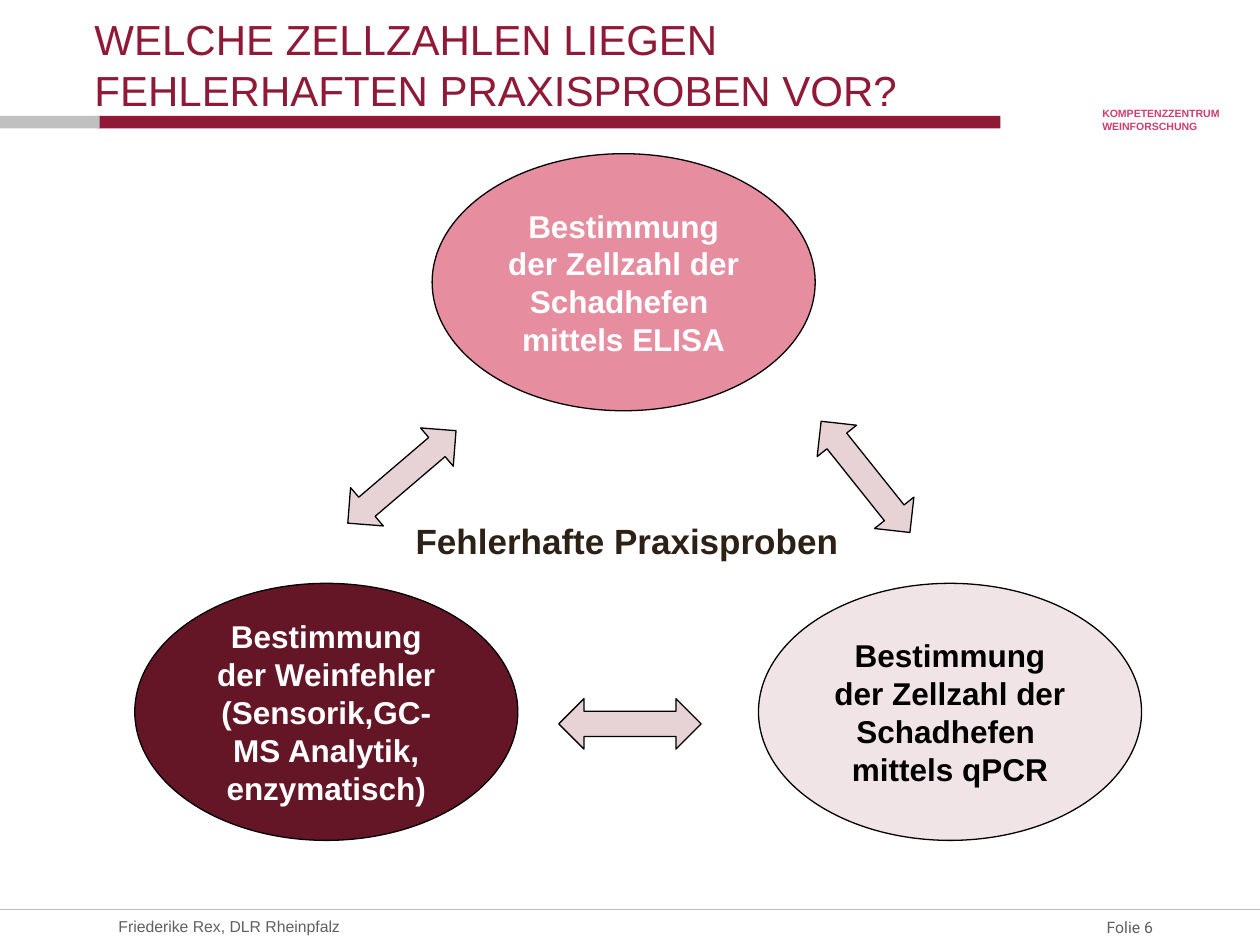
from pptx import Presentation
from pptx.dml.color import RGBColor
from pptx.enum.shapes import MSO_CONNECTOR, MSO_SHAPE
from pptx.enum.text import MSO_ANCHOR, PP_ALIGN
from pptx.util import Inches, Pt
from lxml import etree

W, H = 10, 7.5
WINE, GREY, ARROW = "8F1936", "C0C0C0", "E7D2D6"
BARS = [(0.78, 7.16, WINE), (0, 0.79, GREY)]
OVAL_W, OVAL_H = 3.04, 2.04
OVALS = [
    (1.07, 4.63, "651626", "FFFFFF",
     "Bestimmung der Weinfehler (Sensorik,GC-MS Analytik, enzymatisch)"),
    (3.43, 1.22, "E78DA0", "FFFFFF",
     "Bestimmung der Zellzahl der Schadhefen \vmittels ELISA"),
    (6.02, 4.63, "F1E4E7", "000000",
     "Bestimmung der Zellzahl der Schadhefen \vmittels qPCR"),
]
ARROW_W, ARROW_H = 0.4, 1.13
ARROWS = [(6.67, 3.22, 321.4), (4.8, 5.18, 270), (2.99, 3.22, 229.5)]
FOOTER_Y = 7.22
TEXTS = [
    ("Friederike Rex, DLR Rheinpfalz", (0.94, FOOTER_Y, 6.56, 0.26),
     dict(size=9, color="606060", inset=0, anchor=MSO_ANCHOR.MIDDLE)),
    ("Folie 6", (7.94, FOOTER_Y, 1.21, 0.28),
     dict(size=9, color="606060", font="Roboto", inset=0,
          anchor=MSO_ANCHOR.MIDDLE, align=PP_ALIGN.RIGHT)),
    ("KOMPETENZZENTRUM WEINFORSCHUNG", (8.65, 0.8, 1.33, 0.3),
     dict(size=6, color="CF3D71", bold=True)),
    ("WELCHE ZELLZAHLEN LIEGEN FEHLERHAFTEN PRAXISPROBEN VOR?",
     (0.75, 0.18, 7.44, 0.73),
     dict(size=24, color=WINE, inset=0, anchor=MSO_ANCHOR.BOTTOM)),
    ("Fehlerhafte Praxisproben", (3.2, 4.07, 3.58, 0.44),
     dict(size=20, color="2D2015", bold=True, wrap=False)),
]


def rgb(value):
    """Turn a hex string into a colour."""
    return RGBColor.from_string(value)


def write(sp, text, size, color, font="Arial", bold=False, inset=None,
          anchor=MSO_ANCHOR.TOP, align=PP_ALIGN.LEFT, wrap=True):
    """Fill a shape with one formatted paragraph."""
    tf = sp.text_frame
    tf.word_wrap = wrap
    tf.vertical_anchor = anchor
    if inset is not None:
        tf.margin_left = tf.margin_right = Inches(inset)
        tf.margin_top = tf.margin_bottom = Inches(inset)
    p = tf.paragraphs[0]
    p.text = text
    p.alignment = align
    for r in p.runs:
        r.font.name, r.font.size, r.font.bold = font, Pt(size), bold
        r.font.color.rgb = rgb(color)


def add_shape(s, kind, box, fill, line=None):
    """Add a flat preset shape with an optional thin outline."""
    sp = s.shapes.add_shape(kind, *map(Inches, box))
    sp.shadow.inherit = False
    sp.fill.solid()
    sp.fill.fore_color.rgb = rgb(fill)
    if line:
        sp.line.color.rgb = rgb(line)
        sp.line.width = Pt(0.75)
    else:
        sp.line.fill.background()
    return sp


def add_rule(s, y):
    """Draw the footer rule across the slide."""
    ln = s.shapes.add_connector(MSO_CONNECTOR.STRAIGHT, 0, Inches(y),
                                Inches(W), Inches(y))
    ln.line.color.rgb = rgb(GREY)
    ln.line.width = Pt(0.75)
    sp_pr = ln.line._get_or_add_ln().getparent()
    ns = "http://schemas.openxmlformats.org/drawingml/2006/main"
    etree.SubElement(sp_pr, f"{{{ns}}}effectLst")


def main():
    """Build and save the slide."""
    prs = Presentation()
    prs.slide_width, prs.slide_height = Inches(W), Inches(H)
    s = prs.slides.add_slide(prs.slide_layouts[6])
    for x, width, fill in BARS:
        add_shape(s, MSO_SHAPE.RECTANGLE, (x, 0.92, width, 0.1), fill)
    add_rule(s, FOOTER_Y)
    for x, y, fill, color, text in OVALS:
        sp = add_shape(s, MSO_SHAPE.OVAL, (x, y, OVAL_W, OVAL_H), fill, "000000")
        write(sp, text, 18, color, bold=True, anchor=MSO_ANCHOR.MIDDLE,
              align=PP_ALIGN.CENTER)
    for text, box, style in TEXTS:
        write(s.shapes.add_textbox(*map(Inches, box)), text, **style)
    for x, y, angle in ARROWS:
        sp = add_shape(s, MSO_SHAPE.UP_DOWN_ARROW, (x, y, ARROW_W, ARROW_H),
                       ARROW, "000000")
        sp.rotation = angle
    prs.save("out.pptx")


if __name__ == "__main__":
    main()
